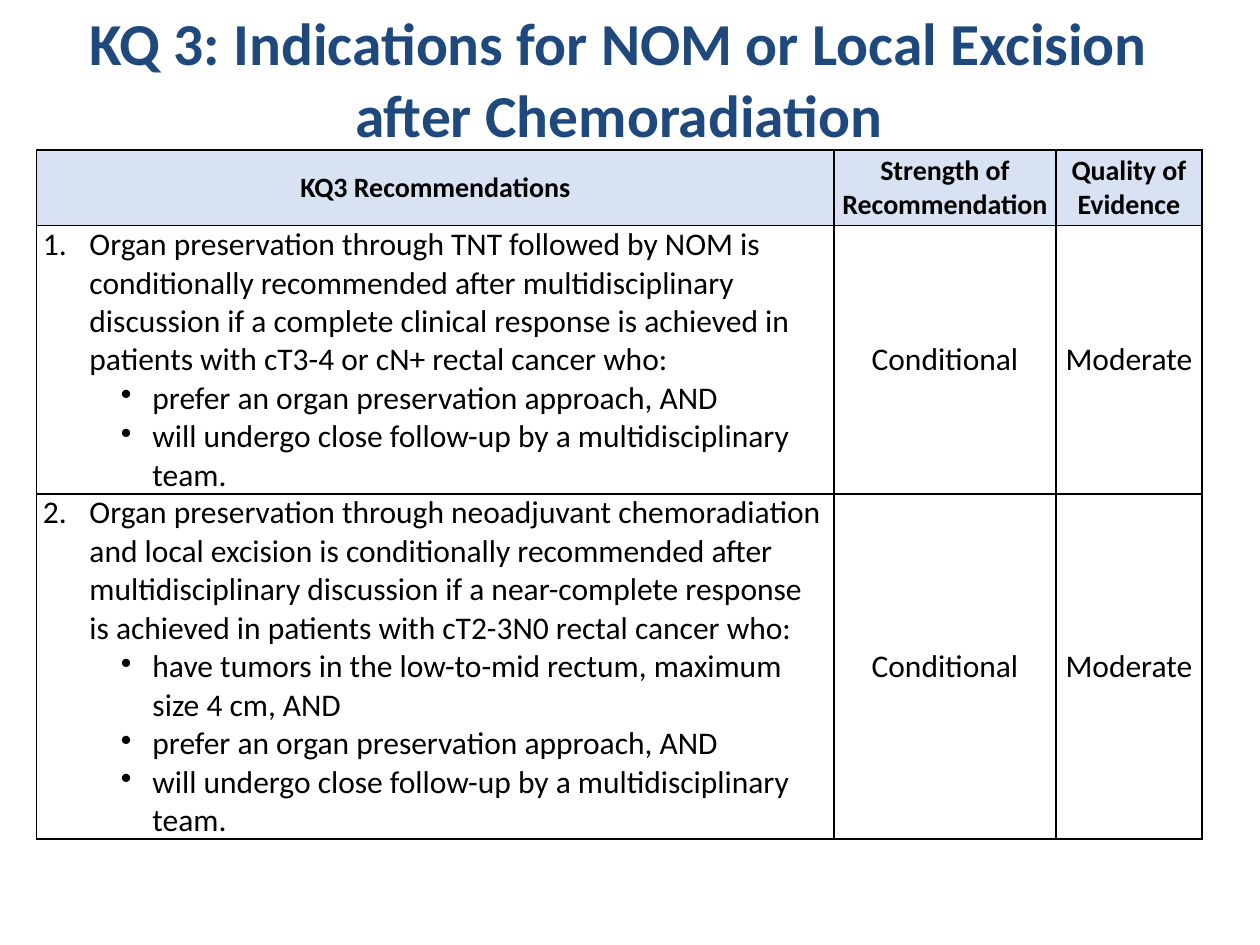
"""Build the KQ 3 recommendations slide with its evidence table."""
from dataclasses import dataclass

from lxml import etree
from pptx import Presentation, util as u
from pptx.dml.color import RGBColor
from pptx.enum import text as t
from pptx.oxml import ns


@dataclass(frozen=True)
class Theme:
    font: str = "Calibri"
    title: str = "1F497D"
    ink: str = "000000"
    band: str = "D9E2F3"
    big: int = 34
    head: int = 16
    body: int = 18


theme = Theme()


def write(frame, text, size=theme.body, color=theme.ink, bold=False,
          align=t.PP_ALIGN.CENTER, mark=None, left=0, hang=0, **attrs):
    para = frame.paragraphs[0]
    if para.runs:
        para = frame.add_paragraph()
    para.alignment = align
    if mark:
        props = para._p.get_or_add_pPr()
        props.set("marL", str(u.Inches(left)))
        props.set("indent", str(-u.Inches(hang)))
        etree.SubElement(props, ns.qn(mark), attrs)
    run = para.add_run()
    run.text = text
    run.font.name = theme.font
    run.font.size = u.Pt(size)
    run.font.bold = bold
    run.font.color.rgb = RGBColor.from_string(color)


def border(cell):
    props = cell._tc.get_or_add_tcPr()
    for side in ("a:lnL", "a:lnR", "a:lnT", "a:lnB"):
        line = etree.SubElement(props, ns.qn(side), w=str(u.Pt(1)))
        fill = etree.SubElement(line, ns.qn("a:solidFill"))
        etree.SubElement(fill, ns.qn("a:srgbClr"), val=theme.ink)


deck = Presentation()
deck.slide_width, deck.slide_height = u.Inches(10), u.Inches(7.5)
slide = deck.slides.add_slide(deck.slide_layouts[6])

title = slide.shapes.add_textbox(u.Inches(0.11), u.Inches(0), u.Inches(9.6), u.Inches(1.11))
title.text_frame.word_wrap = True
write(title.text_frame, "KQ 3: Indications for NOM or Local Excision after Chemoradiation",
      size=theme.big, color=theme.title, bold=True)

heads = ["KQ3 Recommendations", "Strength of Recommendation", "Quality of Evidence"]
prefer = "prefer an organ preservation approach, AND"
follow = "will undergo close follow-up by a multidisciplinary team."
advice = [
    ("Organ preservation through TNT followed by NOM is conditionally recommended after "
     "multidisciplinary discussion if a complete clinical response is achieved in patients "
     "with cT3-4 or cN+ rectal cancer who:",
     [prefer, follow], "Conditional", "Moderate"),
    ("Organ preservation through neoadjuvant chemoradiation and local excision is "
     "conditionally recommended after multidisciplinary discussion if a near-complete "
     "response is achieved in patients with cT2-3N0 rectal cancer who:",
     ["have tumors in the low-to-mid rectum, maximum size 4 cm, AND", prefer, follow],
     "Conditional", "Moderate"),
]
widths = [6.33, 1.76, 1.16]
heights = [0.6, 2.13, 2.74]

table = slide.shapes.add_table(len(heights), len(widths), u.Inches(0.29), u.Inches(1.19),
                               u.Inches(sum(widths)), u.Inches(sum(heights))).table
for col, width in zip(table.columns, widths):
    col.width = u.Inches(width)
for row, height in zip(table.rows, heights):
    row.height = u.Inches(height)

for cell in table.iter_cells():
    cell.margin_left = cell.margin_right = u.Inches(0.05)
    cell.margin_top = cell.margin_bottom = 0
    cell.vertical_anchor = t.MSO_ANCHOR.MIDDLE
    border(cell)
    cell.fill.background()

for col, head in enumerate(heads):
    cell = table.cell(0, col)
    cell.fill.solid()
    cell.fill.fore_color.rgb = RGBColor.from_string(theme.band)
    write(cell.text_frame, head, size=theme.head, bold=True)

for row, (lead, points, *grades) in enumerate(advice, 1):
    cell = table.cell(row, 0)
    cell.vertical_anchor = t.MSO_ANCHOR.TOP
    write(cell.text_frame, lead, align=t.PP_ALIGN.LEFT, mark="a:buAutoNum",
          left=0.37, hang=0.37, type="arabicPeriod", startAt=str(row))
    for point in points:
        write(cell.text_frame, point, align=t.PP_ALIGN.LEFT, mark="a:buChar",
              left=0.87, hang=0.25, char="•")
    for col, grade in enumerate(grades, 1):
        write(table.cell(row, col).text_frame, grade)

deck.save("out.pptx")
